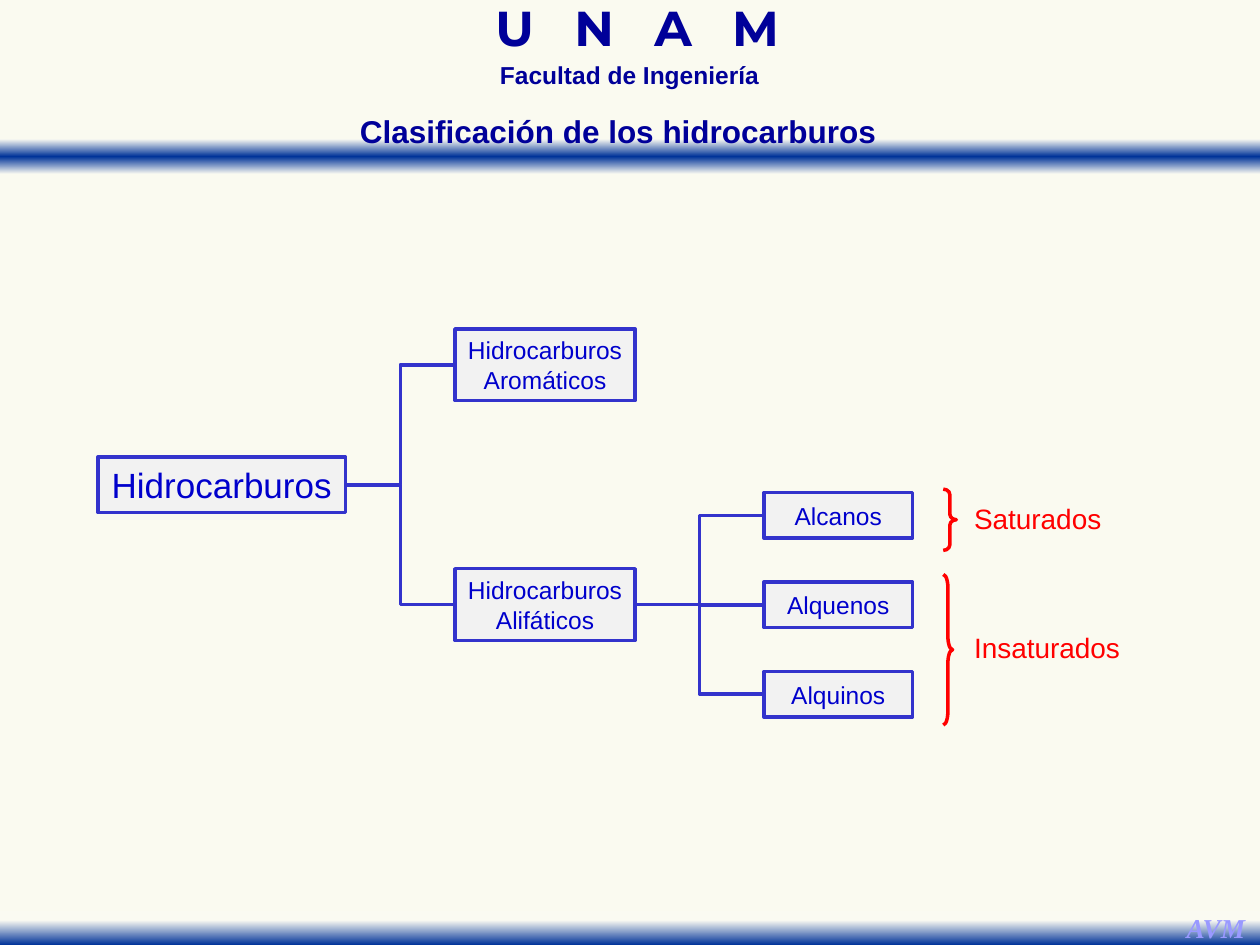
"""Build a slide that classifies hydrocarbons as a tree with braces."""
from dataclasses import dataclass

import lxml.etree
import pptx
import pptx.dml.color
import pptx.enum.shapes
import pptx.enum.text
import pptx.oxml.ns
import pptx.util

Pt = pptx.util.Pt
qn = pptx.oxml.ns.qn
Preset = pptx.enum.shapes.MSO_SHAPE


@dataclass(frozen=True)
class Theme:
    """Colours, fonts and type sizes."""
    background: str = "FAFAF0"
    band_light: str = "FAFAF2"
    band_dark: str = "003399"
    heading: str = "000099"
    signature: str = "9999FF"
    box_fill: str = "F2F2F2"
    box_line: str = "3333CC"
    box_text: str = "0000CC"
    brace: str = "FF0000"
    font: str = "Arial"
    banner_font: str = "Montserrat"
    signature_font: str = "Times New Roman"
    banner_size: float = 28
    root_size: float = 20
    title_size: float = 18
    brace_size: float = 16
    signature_size: float = 15.6
    body_size: float = 14
    line_width: float = 2


THEME = Theme()


@dataclass(frozen=True)
class Area:
    """A rectangle in points."""
    left: float
    top: float
    width: float
    height: float

    def lengths(self) -> tuple:
        """Return the rectangle as lengths."""
        return Pt(self.left), Pt(self.top), Pt(self.width), Pt(self.height)


@dataclass(frozen=True)
class Column:
    """Equal boxes stacked at a fixed step."""
    first: Area
    step: float
    labels: tuple


@dataclass(frozen=True)
class Bracket:
    """A brace, its curvature and its label."""
    area: Area
    curve: float
    label: str
    label_area: Area


BRANCHES = Column(Area(260, 188, 103, 41), 137,
                  ("Hidrocarburos\nAromáticos", "Hidrocarburos\nAlifáticos"))
FAMILIES = Column(Area(436.5, 281.5, 85, 26), 51.1, ("Alcanos", "Alquenos", "Alquinos"))
BRACKETS = (
    Bracket(Area(539, 279.5, 7.5, 35), 0.417, "Saturados", Area(549, 283, 88, 26.6)),
    Bracket(Area(539, 328.3, 5.3, 86), 1.433, "Insaturados", Area(548.6, 356.6, 99.4, 26.6)),
)


def rgb(value: str) -> pptx.dml.color.RGBColor:
    """Return a colour from its hexadecimal value."""
    return pptx.dml.color.RGBColor.from_string(value)


def write_text(shape, text: str, *, size: float, color: str, font: str = THEME.font,
               bold: bool = False, italic: bool = False, wrap: bool = False,
               line_spacing: float = 1.0, letter_spacing: float = 0) -> None:
    """Write centred text, one paragraph per line."""
    frame = shape.text_frame
    frame.text = text
    frame.auto_size = pptx.enum.text.MSO_AUTO_SIZE.NONE
    frame.word_wrap = wrap
    frame.vertical_anchor = pptx.enum.text.MSO_ANCHOR.MIDDLE
    for paragraph in frame.paragraphs:
        paragraph.alignment = pptx.enum.text.PP_ALIGN.CENTER
        paragraph.line_spacing = line_spacing
        for run in paragraph.runs:
            run.font.name = font
            run.font.size = Pt(size)
            run.font.bold = bold
            run.font.italic = italic
            run.font.color.rgb = rgb(color)
    if letter_spacing:
        for properties in shape.element.iter(qn("a:rPr")):
            properties.set("spc", str(round(letter_spacing * 100)))


def add_label(slide, area: Area, text: str, **text_format) -> None:
    """Add a text box."""
    write_text(slide.shapes.add_textbox(*area.lengths()), text, **text_format)


def add_band(slide, area: Area, stops: tuple) -> None:
    """Add a full-width band with a vertical gradient."""
    shape = slide.shapes.add_shape(Preset.RECTANGLE, *area.lengths())
    shape.shadow.inherit = False
    shape.line.fill.background()
    shape.fill.gradient()
    shape.fill.gradient_angle = 270
    stop_list = next(shape.element.iter(qn("a:gsLst")))
    stop_list.clear()
    for position, color in stops:
        stop = lxml.etree.SubElement(stop_list, qn("a:gs"), pos=str(position * 1000))
        lxml.etree.SubElement(stop, qn("a:srgbClr"), val=color)


def add_box(slide, area: Area, text: str, size: float = THEME.body_size):
    """Add a framed box of the tree."""
    shape = slide.shapes.add_shape(Preset.RECTANGLE, *area.lengths())
    shape.shadow.inherit = False
    shape.fill.solid()
    shape.fill.fore_color.rgb = rgb(THEME.box_fill)
    shape.line.color.rgb = rgb(THEME.box_line)
    shape.line.width = Pt(THEME.line_width)
    write_text(shape, text, size=size, color=THEME.box_text)
    return shape


def add_branch(slide, parent, child) -> None:
    """Join the right side of a parent to the left side of a child."""
    connector = slide.shapes.add_connector(pptx.enum.shapes.MSO_CONNECTOR.ELBOW, 0, 0, 0, 0)
    connector.begin_connect(parent, 3)
    connector.end_connect(child, 1)
    connector.line.color.rgb = rgb(THEME.box_line)
    connector.line.width = Pt(THEME.line_width)
    lxml.etree.SubElement(connector.element.spPr, qn("a:effectLst"))


def add_children(slide, parent, column: Column) -> list:
    """Add a column of boxes joined to their parent."""
    first = column.first
    boxes = [
        add_box(slide, Area(first.left, first.top + index * column.step,
                            first.width, first.height), label)
        for index, label in enumerate(column.labels)
    ]
    for box in boxes:
        add_branch(slide, parent, box)
    return boxes


def add_bracket(slide, bracket: Bracket) -> None:
    """Add a brace with its label."""
    shape = slide.shapes.add_shape(Preset.RIGHT_BRACE, *bracket.area.lengths())
    shape.adjustments[0] = bracket.curve
    shape.shadow.inherit = False
    shape.fill.background()
    shape.line.color.rgb = rgb(THEME.brace)
    shape.line.width = Pt(THEME.line_width)
    add_label(slide, bracket.label_area, bracket.label,
              size=THEME.brace_size, color=THEME.brace)


def main() -> None:
    """Build and save the presentation."""
    presentation = pptx.Presentation()
    presentation.slide_width, presentation.slide_height = Pt(720), Pt(540)
    slide = presentation.slides.add_slide(presentation.slide_layouts[5])
    slide.background.fill.solid()
    slide.background.fill.fore_color.rgb = rgb(THEME.background)

    light, dark = THEME.band_light, THEME.band_dark
    add_band(slide, Area(0, 79.5, 720, 20), ((0, light), (50, dark), (100, light)))
    add_band(slide, Area(0, 520.4, 720, 19.6), ((28, light), (100, dark)))
    add_label(slide, Area(223.4, 4.3, 281.5, 31), "U N A M", size=THEME.banner_size,
              color=THEME.heading, font=THEME.banner_font, bold=True, wrap=True,
              line_spacing=0.7, letter_spacing=7.6)
    add_label(slide, Area(231.3, 35, 257, 19.4), "Facultad de Ingeniería",
              size=THEME.body_size, color=THEME.heading, bold=True, wrap=True,
              line_spacing=0.7)
    add_label(slide, Area(670.3, 517, 49, 26.6), "AVM", size=THEME.signature_size,
              color=THEME.signature, font=THEME.signature_font, bold=True, italic=True)

    title = slide.shapes.title
    title.left, title.top, title.width, title.height = Area(192, 60.5, 322.5, 29).lengths()
    write_text(title, "Clasificación de los hidrocarburos", size=THEME.title_size,
               color=THEME.heading, bold=True)
    title.element.getparent().append(title.element)

    root = add_box(slide, Area(56, 261.2, 141.5, 31.6), "Hidrocarburos", THEME.root_size)
    branches = add_children(slide, root, BRANCHES)
    add_children(slide, branches[-1], FAMILIES)
    for bracket in BRACKETS:
        add_bracket(slide, bracket)
    presentation.save("out.pptx")


if __name__ == "__main__":
    main()
